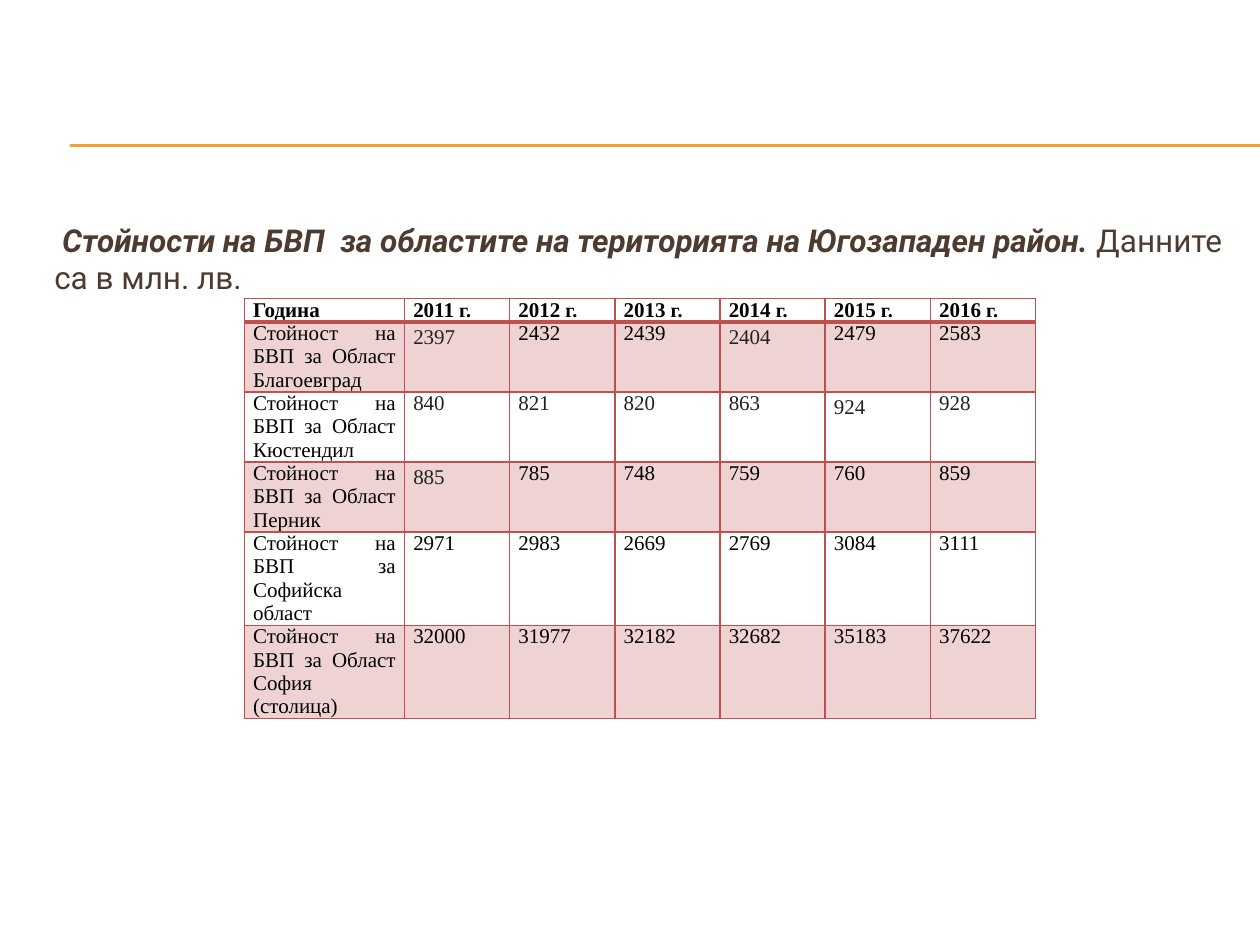
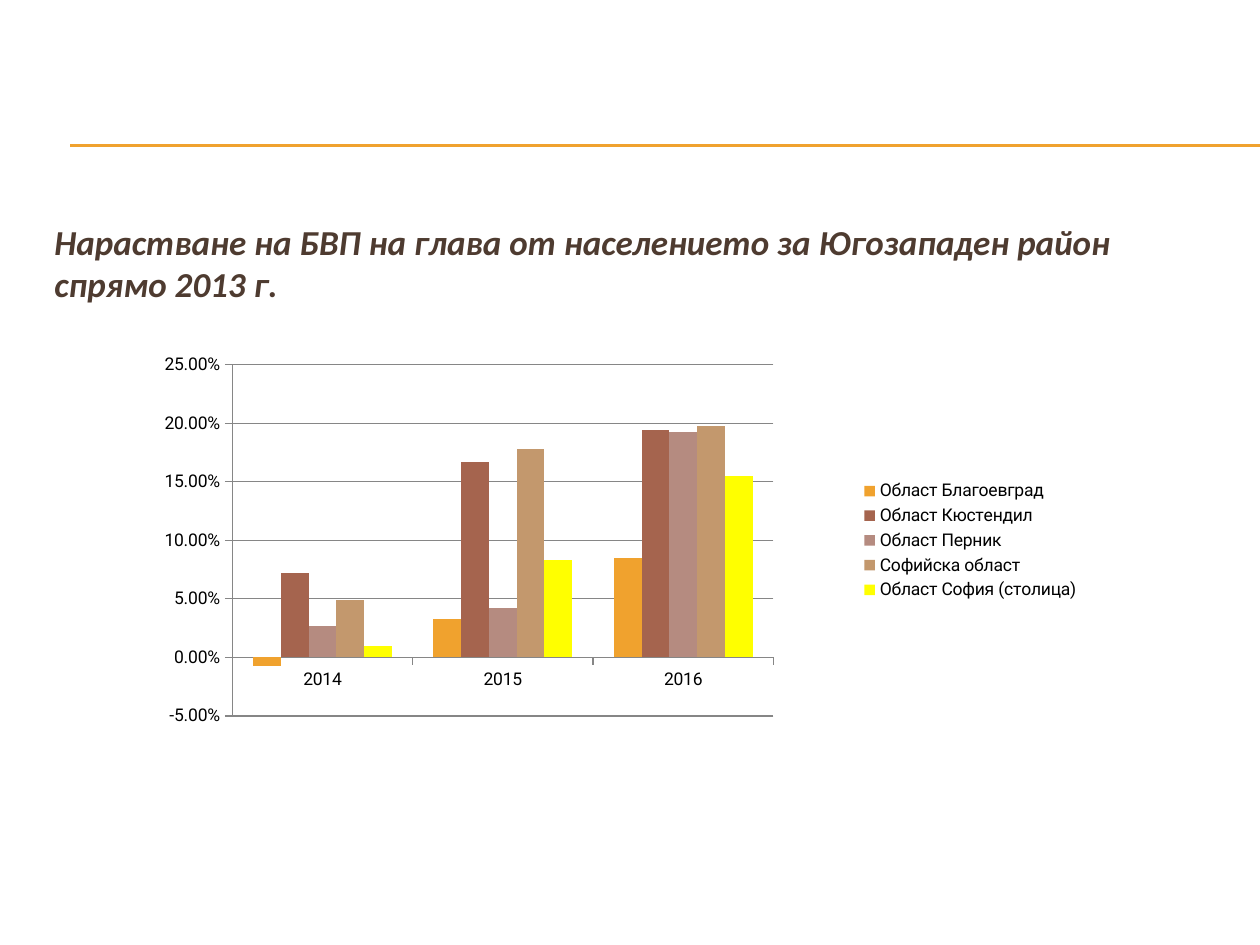
from lxml.etree import SubElement
from pptx import Presentation
from pptx.chart.data import CategoryChartData
from pptx.dml.color import RGBColor
from pptx.enum.chart import XL_CHART_TYPE, XL_LEGEND_POSITION, XL_TICK_MARK
from pptx.enum.shapes import MSO_CONNECTOR
from pptx.enum.text import MSO_ANCHOR, MSO_AUTO_SIZE, PP_ALIGN
from pptx.oxml import parse_xml
from pptx.oxml.ns import nsdecls, qn
from pptx.util import Pt

ORANGE, BROWN, BLACK, DARK = "F0A22E", "4E3B30", "000000", "222222"
RED, PINK, GRAY = "C0504D", "EFD3D2", "868686"
SANS, SERIF, HEADING = "Roboto", "Times New Roman", "Calibri"


def rgb(color):
    return RGBColor.from_string(color)


def set_font(font, name, size, color, bold=False, italic=False):
    font.name, font.size = name, Pt(size)
    font.bold, font.italic = bold, italic
    font.color.rgb = rgb(color)


def set_line(line, color, width=0.75):
    line.color.rgb = rgb(color)
    line.width = Pt(width)


class Deck:
    def __init__(self):
        self.prs = Presentation()
        self.prs.slide_width, self.prs.slide_height = Pt(720), Pt(540)
        self.s = None

    def add_slide(self):
        self.s = self.prs.slides.add_slide(self.prs.slide_layouts[5])
        for y in (82.8, 83.5):
            self.rule(40.3, y, 720)

    def rule(self, left, y, right):
        line = self.s.shapes.add_connector(
            MSO_CONNECTOR.STRAIGHT, Pt(left), Pt(y), Pt(right), Pt(y))
        set_line(line.line, ORANGE)
        SubElement(line._element.spPr, qn("a:effectLst"))

    def title(self, runs, font, size):
        """Fill the title with (text, emphasised) runs."""
        sp = self.s.shapes.title
        sp.left, sp.top, sp.width, sp.height = Pt(23.8), Pt(122.4), Pt(684), Pt(356.4)
        tf = sp.text_frame
        tf.word_wrap, tf.auto_size = True, MSO_AUTO_SIZE.NONE
        tf.vertical_anchor = MSO_ANCHOR.TOP
        p = tf.paragraphs[0]
        p.alignment, p.space_before = PP_ALIGN.LEFT, Pt(size * 0.2)
        for text, strong in runs:
            r = p.add_run()
            r.text = text
            set_font(r.font, font, size, BROWN, strong, strong)

    def table(self, left, top, widths, heights):
        tbl = self.s.shapes.add_table(
            len(heights), len(widths), Pt(left), Pt(top),
            Pt(sum(widths)), Pt(sum(heights))).table
        tbl.first_row = tbl.horz_banding = False
        for col, width in zip(tbl.columns, widths):
            col.width = Pt(width)
        for row, height in zip(tbl.rows, heights):
            row.height = Pt(height)
        return tbl

    def cell(self, cell, text, color=BLACK, fill=None, suffix="", bold=False,
             align=PP_ALIGN.LEFT, spacing=1.0, top=1, bottom=1):
        cell.margin_left = cell.margin_right = Pt(5)
        cell.margin_top = cell.margin_bottom = 0
        self.borders(cell, L=1, R=1, T=top, B=bottom)
        if fill:
            cell.fill.solid()
            cell.fill.fore_color.rgb = rgb(fill)
        else:
            cell.fill.background()
        p = cell.text_frame.paragraphs[0]
        p.alignment, p.line_spacing = align, spacing
        set_font(p.font, SERIF, 12, color, bold)
        p.add_run().text = text
        if suffix:
            r = p.add_run()
            r.text, r.font.size = suffix, Pt(11.5)

    def borders(self, cell, **widths):
        tcPr = cell._tc.get_or_add_tcPr()
        for side, width in widths.items():
            tcPr.append(parse_xml(
                f'<a:ln{side} {nsdecls("a")} w="{Pt(width)}"><a:solidFill>'
                f'<a:srgbClr val="{RED}"/></a:solidFill></a:ln{side}>'))

    def column_chart(self, box, plot, cats, series):
        data = CategoryChartData(number_format="0.00%")
        data.categories = cats
        for name, values, _ in series:
            data.add_series(name, values)
        chart = self.s.shapes.add_chart(
            XL_CHART_TYPE.COLUMN_CLUSTERED, *map(Pt, box), data).chart
        set_font(chart.font, SANS, 10, BLACK)
        chart.has_title = False
        chart.has_legend = True
        chart.legend.position = XL_LEGEND_POSITION.RIGHT
        chart.legend.include_in_layout = False

        # Columns
        bars = chart.plots[0]
        bars.gap_width, bars.overlap, bars.vary_by_categories = 150, 0, False
        for ser, (_, _, color) in zip(bars.series, series):
            ser.invert_if_negative = False
            ser.format.fill.solid()
            ser.format.fill.fore_color.rgb = rgb(color)

        # Axes
        axis = chart.value_axis
        axis.minimum_scale, axis.maximum_scale, axis.major_unit = -0.05, 0.25, 0.05
        axis.tick_labels.number_format = "0.00%"
        axis.tick_labels.number_format_is_linked = False
        set_line(axis.major_gridlines.format.line, GRAY)
        for ax in (axis, chart.category_axis):
            ax.major_tick_mark = XL_TICK_MARK.OUTSIDE
            ax.minor_tick_mark = XL_TICK_MARK.NONE
            set_line(ax.format.line, GRAY)
        self.plot_layout(chart, plot)

    def plot_layout(self, chart, plot):
        area = chart._chartSpace.chart.plotArea
        for old in area.findall(qn("c:layout")):
            area.remove(old)
        parts = "".join(f'<c:{tag} val="{value}"/>' for tag, value in zip("xywh", plot))
        area.insert(0, parse_xml(
            f'<c:layout {nsdecls("c")}><c:manualLayout><c:layoutTarget val="inner"/>'
            f'<c:xMode val="edge"/><c:yMode val="edge"/>{parts}'
            '</c:manualLayout></c:layout>'))


def gdp_table(deck):
    deck.add_slide()
    deck.title([(" Стойности на БВП  за областите на територията на Югозападен район. ", True),
                ("Данните са в млн. лв.", False)], SANS, 18)
    regions = [
        ("Област Благоевград", [2397, 2432, 2439, 2404, 2479, 2583]),
        ("Област Кюстендил", [840, 821, 820, 863, 924, 928]),
        ("Област Перник", [885, 785, 748, 759, 760, 859]),
        ("Софийска област", [2971, 2983, 2669, 2769, 3084, 3111]),
        ("Област София (столица)", [32000, 31977, 32182, 32682, 35183, 37622]),
    ]
    gray_values = {2397, 2404, 885, *regions[1][1]}
    spaced_values = {2397, 2404, 924, 885}
    tbl = deck.table(139.7, 170.6, [91.5] + [60.1] * 6, [13.2, 40, 40, 40, 53.4, 53.4])

    # Header row
    deck.cell(tbl.cell(0, 0), "Година", bold=True, bottom=2.25)
    for col, year in enumerate(range(2011, 2017), 1):
        deck.cell(tbl.cell(0, col), str(year), suffix=" г.", bold=True, bottom=2.25)

    # Regions
    for row, (region, values) in enumerate(regions, 1):
        look = {"fill": PINK if row % 2 else None, "top": 2.25 if row == 1 else 1}
        deck.cell(tbl.cell(row, 0), f"Стойност на БВП за {region}",
                  align=PP_ALIGN.JUSTIFY, **look)
        for col, value in enumerate(values, 1):
            deck.cell(tbl.cell(row, col), str(value),
                      color=DARK if value in gray_values else BLACK,
                      spacing=1.15 if value in spaced_values else 1.0, **look)


def growth_chart(deck):
    deck.add_slide()
    deck.title([("Нарастване на БВП на глава от населението за Югозападен район "
                 "спрямо 2013 г.", True)], HEADING, 20)
    deck.column_chart(
        (72, 192.2, 552.2, 233.3), (0.11, 0.07, 0.56, 0.86), ["2014", "2015", "2016"],
        [("Област Благоевград", (-0.007, 0.033, 0.085), ORANGE),
         ("Област Кюстендил", (0.072, 0.167, 0.194), "A5644E"),
         ("Област Перник", (0.027, 0.042, 0.193), "B58B80"),
         ("Софийска област", (0.049, 0.178, 0.198), "C3986D"),
         ("Област София (столица)", (0.01, 0.083, 0.155), "FFFF00")])


def main():
    deck = Deck()
    gdp_table(deck)
    growth_chart(deck)
    deck.prs.save("out.pptx")


if __name__ == "__main__":
    main()
